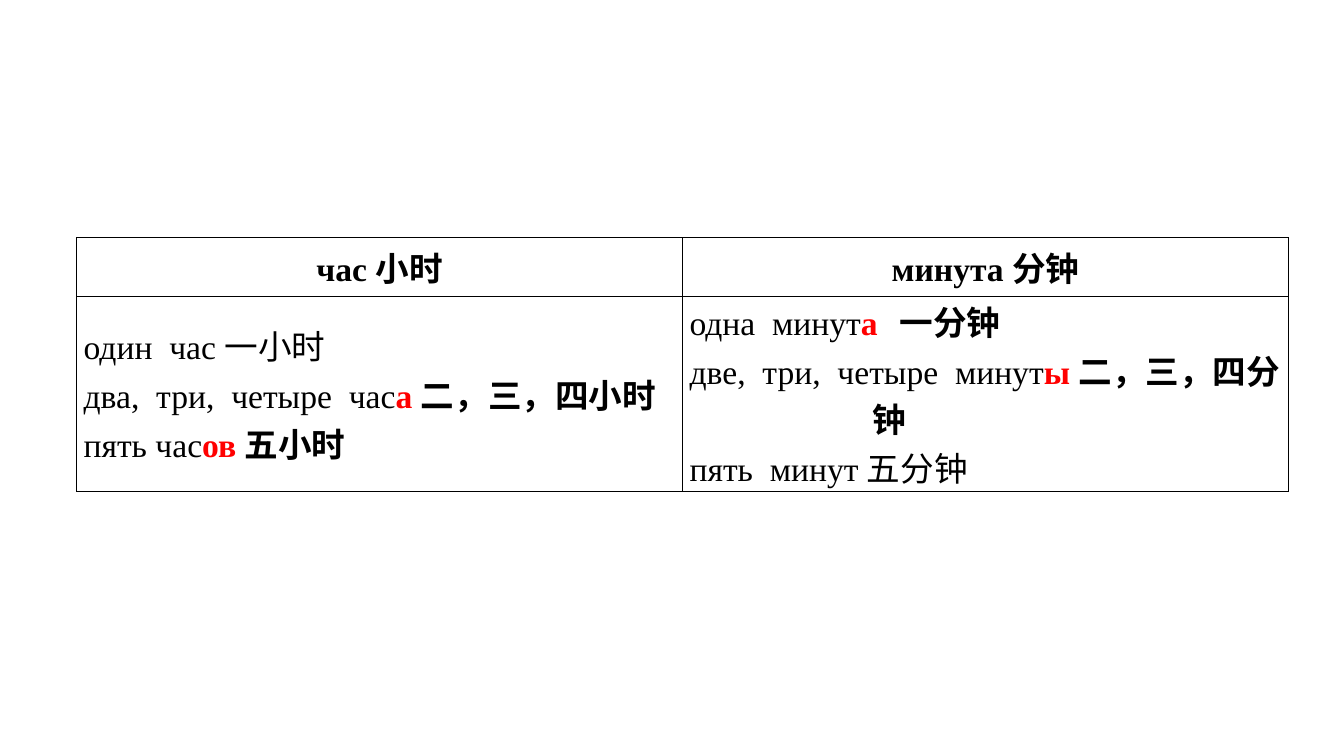
from dataclasses import dataclass

from lxml.etree import SubElement
from pptx import Presentation
from pptx.dml.color import RGBColor
from pptx.enum.lang import MSO_LANGUAGE_ID
from pptx.enum.text import MSO_ANCHOR, PP_ALIGN
from pptx.oxml.ns import qn
from pptx.util import Inches, Pt


@dataclass(frozen=True)
class Theme:
    font: str = "Times New Roman"
    size: int = 24
    ink: str = "000000"
    ending: str = "FF0000"
    border: int = 1


@dataclass(frozen=True)
class Line:
    spans: tuple
    align: PP_ALIGN = PP_ALIGN.LEFT
    hanging: float = 0
    center_tab: float = 0


class SlideBuilder:
    def __init__(self, slide, theme):
        self.slide = slide
        self.theme = theme

    def add_table(self, left, top, widths, heights, rows):
        frame = self.slide.shapes.add_table(
            len(heights), len(widths), Inches(left), Inches(top),
            Inches(sum(widths)), Inches(sum(heights)))
        table = frame.table
        table.first_row = table.horz_banding = False
        for column, width in zip(table.columns, widths):
            column.width = Inches(width)
        for row, height, contents in zip(table.rows, heights, rows):
            row.height = Inches(height)
            for cell, lines in zip(row.cells, contents):
                self.fill_cell(cell, lines)

    def fill_cell(self, cell, lines):
        cell.margin_left = cell.margin_right = Inches(0.07)
        cell.margin_top = cell.margin_bottom = Inches(0)
        cell.vertical_anchor = MSO_ANCHOR.MIDDLE
        self.add_borders(cell)
        cell.fill.background()
        for index, line in enumerate(lines):
            text = cell.text_frame
            para = text.add_paragraph() if index else text.paragraphs[0]
            self.add_line(para, line)

    def add_borders(self, cell):
        properties = cell._tc.get_or_add_tcPr()
        for side in ("lnL", "lnR", "lnT", "lnB"):
            border = SubElement(properties, qn(f"a:{side}"), w=str(Pt(self.theme.border)))
            fill = SubElement(border, qn("a:solidFill"))
            SubElement(fill, qn("a:srgbClr"), val=self.theme.ink)

    def add_line(self, para, line):
        para.alignment = line.align
        properties = para._p.get_or_add_pPr()
        if line.hanging:
            properties.set("marL", str(Inches(line.hanging)))
            properties.set("indent", str(-Inches(line.hanging)))
        if line.center_tab:
            tabs = SubElement(properties, qn("a:tabLst"))
            SubElement(tabs, qn("a:tab"), pos=str(Inches(line.center_tab)), algn="ctr")
        for words, color, bold in line.spans:
            span = para.add_run()
            span.text = words
            span.font.name = self.theme.font
            span.font.size = Pt(self.theme.size)
            span.font.bold = bold
            span.font.color.rgb = RGBColor.from_string(color)
            span.font.language_id = MSO_LANGUAGE_ID.SIMPLIFIED_CHINESE


def main():
    theme = Theme()

    def heading(words):
        return [Line(((words, theme.ink, True),), PP_ALIGN.CENTER)]

    def phrase(stem, ending="", translation="", **layout):
        spans = [(stem, theme.ink, False)]
        if ending:
            spans += [(ending, theme.ending, True), (translation, theme.ink, True)]
        return Line(tuple(spans), **layout)

    hours = [
        phrase("один  час 一小时"),
        phrase("два,  три,  четыре  час", "а ", "二，三，四小时"),
        phrase("пять час", "ов ", "五小时"),
    ]
    minutes = [
        phrase("одна  минут", "а\t ", "一分钟", center_tab=1.07),
        phrase("две,  три,  четыре  минут", "ы ", "二，三，四分钟", hanging=1.81),
        phrase("пять  минут 五分钟"),
    ]

    deck = Presentation()
    deck.slide_width = Inches(13.33)
    deck.slide_height = Inches(7.5)
    page = SlideBuilder(deck.slides.add_slide(deck.slide_layouts[6]), theme)
    page.add_table(0.76, 2.36, [6.01] * 2, [0.58, 1.85],
                   [[heading("час 小时"), heading("минута 分钟")], [hours, minutes]])
    deck.save("out.pptx")


if __name__ == "__main__":
    main()
